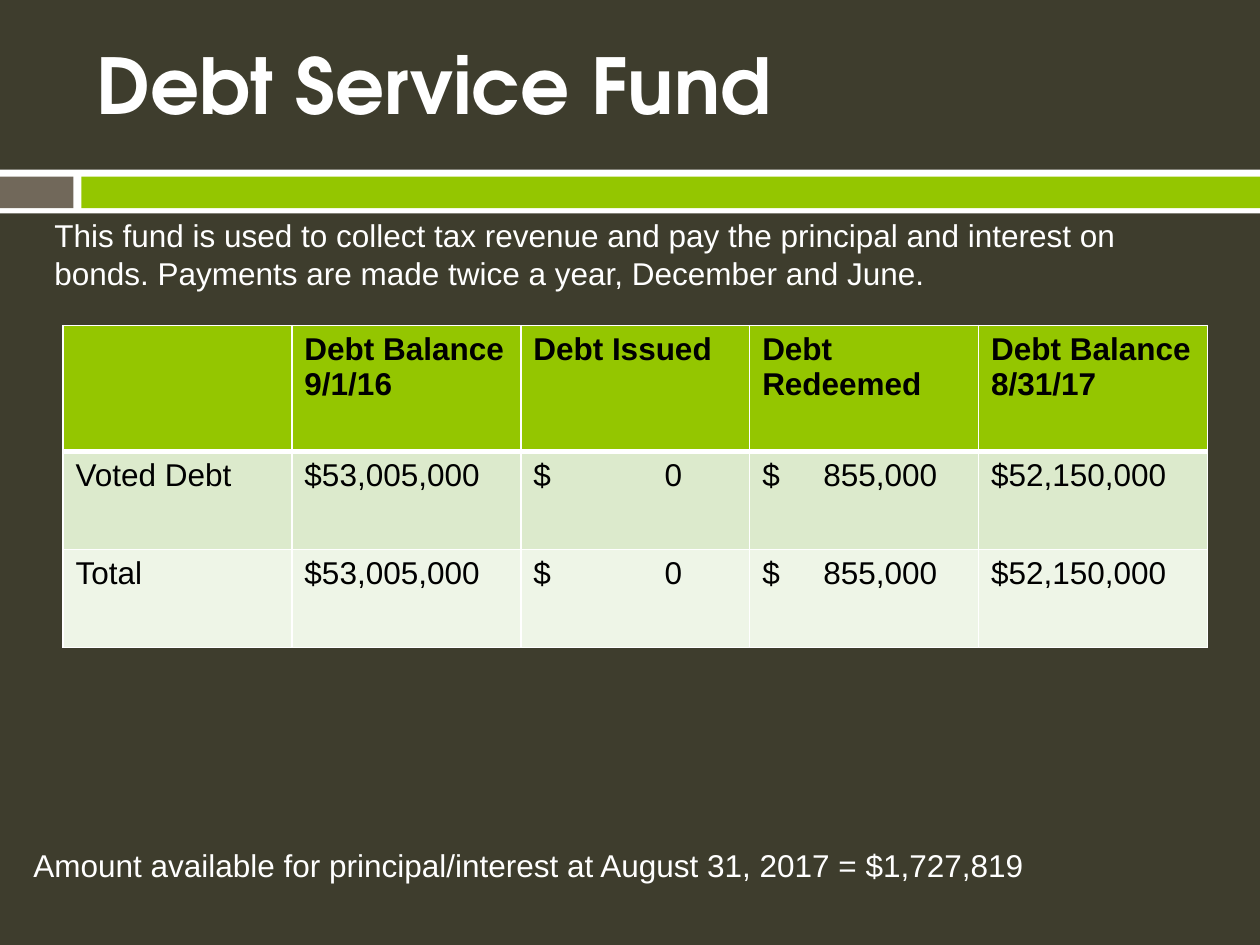
from lxml import etree
from pptx import Presentation
from pptx import util as u
from pptx.dml import color
from pptx.enum import shapes, text
from pptx.oxml import ns

COLORS = {
    "ground": "3E3D2D", "white": "FFFFFF", "black": "000000", "green": "94C600",
    "taupe": "71685A", "band_dark": "DCEACC", "band_light": "EEF5E7",
}
HEADERS = ["", "Debt Balance 9/1/16", "Debt Issued", "Debt Redeemed", "Debt Balance 8/31/17"]
AMOUNTS = ["$53,005,000", "$\t0", "$\t855,000", "$52,150,000"]
ROWS = [HEADERS, ["Voted Debt", *AMOUNTS], ["Total", *AMOUNTS]]
ROW_FILLS = ["green", "band_dark", "band_light"]
ROW_HEIGHTS = [72, 56, 56]
AMOUNT_TABS = {2: 85, 3: 100}


def rgb(name):
    return color.RGBColor.from_string(COLORS[name])


def paint(target, name):
    target.fill.solid()
    target.fill.fore_color.rgb = rgb(name)


def write(para, words, ink, **formats):
    span = para.add_run()
    span.text = words
    span.font.color.rgb = rgb(ink)
    for key, value in {"name": "Arial", "size": u.Pt(18), "bold": False, **formats}.items():
        setattr(span.font, key, value)


def add_band(page, left, top, width, height):
    """White strip holding a short taupe block and a long green bar."""
    bars = [
        (0, 0, width, height, "white"),
        (0, 4, 42, height - 7, "taupe"),
        (46.5, 4, width - 46.5, height - 7, "green"),
    ]
    for x, y, bar_width, bar_height, fill in bars:
        bar = page.shapes.add_shape(
            shapes.MSO_SHAPE.RECTANGLE,
            u.Pt(left + x), u.Pt(top + y), u.Pt(bar_width), u.Pt(bar_height))
        bar.shadow.inherit = False
        bar.line.fill.background()
        paint(bar, fill)


def add_text(page, box, words, anchor=text.MSO_ANCHOR.TOP, **formats):
    frame = page.shapes.add_textbox(*map(u.Pt, box)).text_frame
    frame.word_wrap = True
    frame.vertical_anchor = anchor
    write(frame.paragraphs[0], words, "white", **formats)


def add_borders(cell, widths):
    props = cell._tc.get_or_add_tcPr()
    for side, points in zip("LRTB", widths):
        line = etree.SubElement(props, ns.qn(f"a:ln{side}"), w=str(u.Pt(points)))
        fill = etree.SubElement(line, ns.qn("a:solidFill"))
        etree.SubElement(fill, ns.qn("a:srgbClr"), val=COLORS["white"])


def add_right_tab(para, points):
    tabs = etree.SubElement(para._p.get_or_add_pPr(), ns.qn("a:tabLst"))
    etree.SubElement(tabs, ns.qn("a:tab"), pos=str(u.Pt(points)), algn="r")


def add_debt_table(page, left, top, width):
    table = page.shapes.add_table(
        len(ROWS), len(HEADERS),
        u.Pt(left), u.Pt(top), u.Pt(width), u.Pt(sum(ROW_HEIGHTS))).table
    for column in table.columns:
        column.width = u.Pt(width / len(HEADERS))
    for r, values in enumerate(ROWS):
        table.rows[r].height = u.Pt(ROW_HEIGHTS[r])
        for c, words in enumerate(values):
            cell = table.cell(r, c)
            add_borders(cell, (1, 1, 3 if r == 1 else 1, 3 if r == 0 else 1))
            paint(cell, ROW_FILLS[r])
            para = cell.text_frame.paragraphs[0]
            if "\t" in words:
                add_right_tab(para, AMOUNT_TABS[c])
            if words:
                write(para, words, "black", bold=r == 0)


def main():
    deck = Presentation()
    deck.slide_width, deck.slide_height = u.Pt(720), u.Pt(540)
    page = deck.slides.add_slide(deck.slide_layouts[6])
    paint(page.background, "ground")

    add_band(page, 0, 97, 720, 25)
    add_text(page, (48, 0, 624, 96), "Debt Service Fund", text.MSO_ANCHOR.MIDDLE,
             name="TeX Gyre Adventor", size=u.Pt(44), bold=True)
    add_text(page, (24, 120, 672, 51),
             "This fund is used to collect tax revenue and pay the principal and interest on "
             "bonds. Payments are made twice a year, December and June.")
    add_text(page, (12, 480, 672, 29),
             "Amount available for principal/interest at August 31, 2017 = $1,727,819")
    add_debt_table(page, 36, 186, 654)
    deck.save("out.pptx")


if __name__ == "__main__":
    main()
